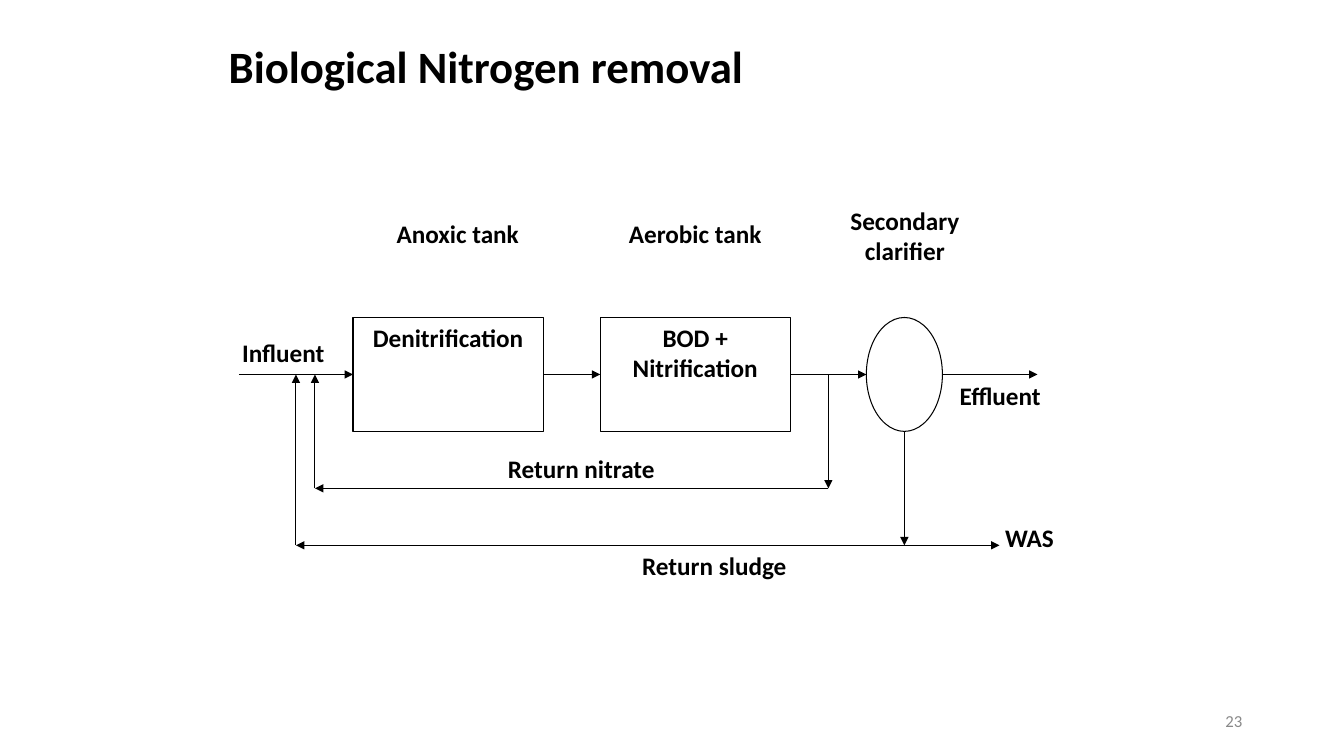
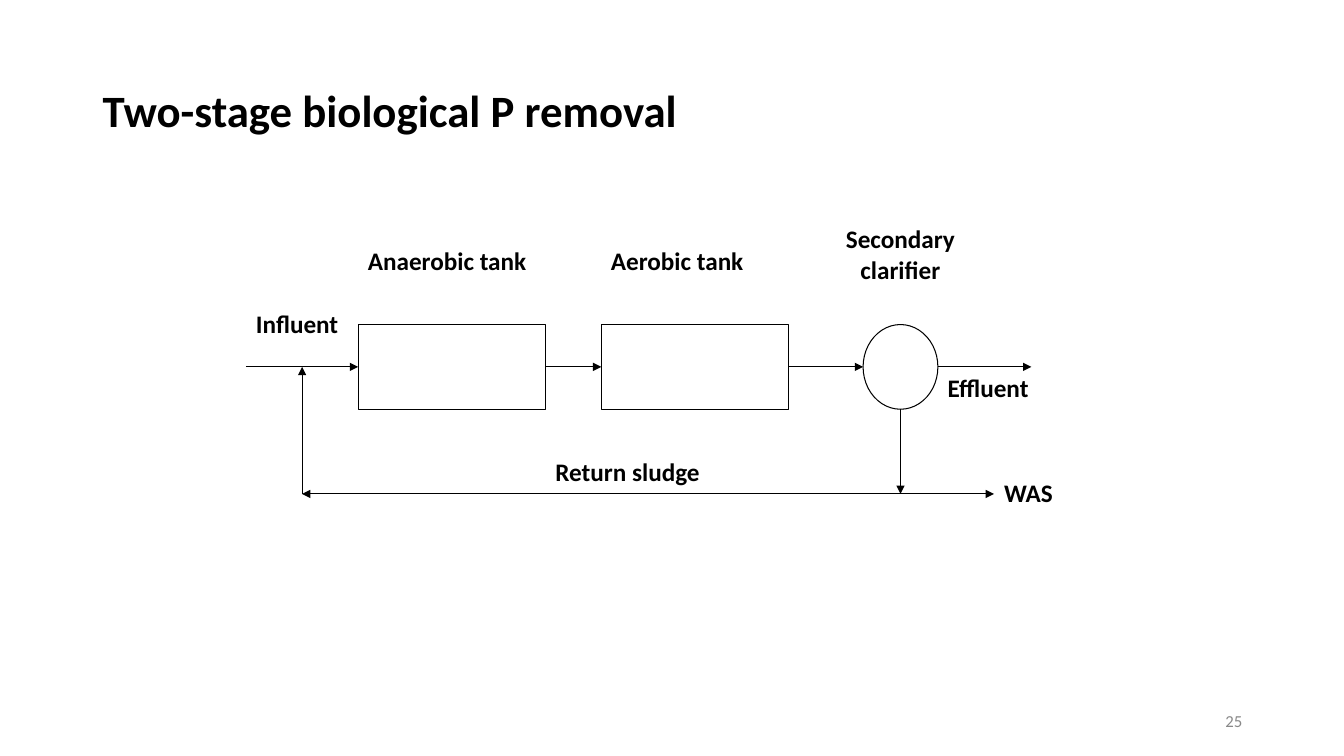
from lxml import etree
from pptx import Presentation
from pptx.dml.color import RGBColor
from pptx.enum.shapes import MSO_CONNECTOR, MSO_SHAPE
from pptx.enum.text import MSO_ANCHOR, PP_ALIGN
from pptx.oxml.ns import qn
from pptx.util import Inches, Pt

BLACK = RGBColor(0x00, 0x00, 0x00)
WHITE = RGBColor(0xFF, 0xFF, 0xFF)
GRAY = RGBColor(0x89, 0x89, 0x89)
FONT = "Calibri"
STRAIGHT = MSO_CONNECTOR.STRAIGHT
RECTANGLE, OVAL = MSO_SHAPE.RECTANGLE, MSO_SHAPE.OVAL
TOP, MIDDLE = MSO_ANCHOR.TOP, MSO_ANCHOR.MIDDLE
LEFT, CENTER, RIGHT = PP_ALIGN.LEFT, PP_ALIGN.CENTER, PP_ALIGN.RIGHT
LEFT_SIDE, RIGHT_SIDE = 1, 3


class Deck:
    def __init__(self):
        self.presentation = Presentation()
        self.presentation.slide_width = Inches(13.33)
        self.presentation.slide_height = Inches(7.5)
        self.slide = None

    def new_slide(self, title, title_box, number):
        layout = self.presentation.slide_layouts[6]
        self.slide = self.presentation.slides.add_slide(layout)
        heading = self.text(title, title_box, LEFT, size=32, anchor=MIDDLE)
        heading.line_spacing = 0.9
        self.text(number, (9.42, 6.95, 3, 0.4), RIGHT, 12, GRAY, False, MIDDLE)

    def fill_frame(self, frame, wording, align, size=18, color=BLACK, bold=True, anchor=TOP):
        frame.word_wrap = True
        frame.vertical_anchor = anchor
        frame.text = wording
        paragraph = frame.paragraphs[0]
        paragraph.alignment = align
        font = paragraph.runs[0].font
        font.name, font.size, font.bold = FONT, Pt(size), bold
        font.color.rgb = color
        return paragraph

    def text(self, wording, box, align, size=18, color=BLACK, bold=True, anchor=TOP):
        frame = self.slide.shapes.add_textbox(*map(Inches, box)).text_frame
        return self.fill_frame(frame, wording, align, size, color, bold, anchor)

    def labels(self, entries, align):
        for wording, *box in entries:
            self.text(wording, box, align).space_after = Pt(10)

    def unit(self, kind, box, wording=""):
        unit = self.slide.shapes.add_shape(kind, *map(Inches, box))
        unit.shadow.inherit = False
        unit.fill.solid()
        unit.fill.fore_color.rgb = WHITE
        unit.line.color.rgb = BLACK
        unit.line.width = Pt(0.75)
        if wording:
            self.fill_frame(unit.text_frame, wording, CENTER).space_after = Pt(10)
        return unit

    def arrow(self, start, end, source=None, target=None, both=False):
        arrow = self.slide.shapes.add_connector(STRAIGHT, *map(Inches, (*start, *end)))
        arrow.line.color.rgb = BLACK
        arrow.line.width = Pt(0.75)
        properties = arrow._element.spPr
        line = properties.find(qn("a:ln"))
        for tag in ("a:headEnd", "a:tailEnd") if both else ("a:tailEnd",):
            etree.SubElement(line, qn(tag)).set("type", "triangle")
        etree.SubElement(properties, qn("a:effectLst"))
        if source:
            arrow.begin_connect(source, RIGHT_SIDE)
        if target:
            arrow.end_connect(target, LEFT_SIDE)

    def process_train(self, inlet, span, top, height, processes=("", ""), nitrate=False):
        def x(step):
            return inlet + step * span / 42

        flow = top + height / 2
        sludge = top + 2 * height
        first, second = [
            self.unit(RECTANGLE, (x(step), top, x(10) - inlet, height), process)
            for step, process in zip((6, 19), processes)
        ]
        self.unit(OVAL, (x(33), top, x(4) - inlet, height))

        for start, end, source, target in (
            (0, 6, None, first),
            (16, 19, first, second),
            (29, 33, second, None),
            (37, 42, None, None),
        ):
            self.arrow((x(start), flow), (x(end), flow), source, target)

        self.arrow((x(3), sludge), (x(3), flow))
        self.arrow((x(3), sludge), (x(40), sludge), both=True)
        self.arrow((x(35), top + height), (x(35), sludge))

        if nitrate:
            recycle = top + 1.5 * height
            route = ((x(31), flow), (x(31), recycle), (x(4), recycle), (x(4), flow))
            for start, end in zip(route, route[1:]):
                self.arrow(start, end)


def nitrogen_removal(deck):
    deck.new_slide("Biological Nitrogen removal", (2.17, 0.3, 9, 0.77), "23")
    deck.process_train(
        2.37, 7.92, 3.15, 1.13, ("Denitrification", "BOD + Nitrification"), nitrate=True
    )
    deck.labels((
        ("Return nitrate", 4.82, 4.45, 1.89, 0.56),
        ("Return sludge", 6.14, 5.41, 1.89, 0.47),
        ("WAS", 9.74, 5.13, 0.94, 0.56),
        ("Anoxic tank", 3.69, 2.12, 1.7, 0.84),
        ("Aerobic tank", 5.95, 2.12, 1.89, 0.84),
        ("Secondary clarifier", 8.22, 1.99, 1.51, 1.13),
        ("Influent", 2.18, 3.3, 1.26, 0.84),
        ("Effluent", 9.35, 3.72, 1.14, 0.84),
    ), CENTER)


def phosphorus_removal(deck):
    deck.new_slide("Two-stage biological P removal", (0.92, 0.4, 11.5, 1.45), "25")
    deck.process_train(2.44, 7.79, 3.22, 0.84)
    deck.labels((
        ("Return sludge", 5.41, 4.48, 1.85, 0.63),
        ("WAS", 9.86, 4.69, 0.93, 0.42),
        ("Anaerobic tank", 3.55, 2.38, 1.85, 0.63),
        ("Aerobic tank", 5.96, 2.38, 1.85, 0.63),
        ("Influent", 2.44, 3.01, 1.11, 0.63),
        ("Effluent", 9.3, 3.64, 1.3, 0.63),
    ), LEFT)
    deck.labels((("Secondary clarifier", 8.19, 2.17, 1.48, 0.84),), CENTER)


def main():
    deck = Deck()
    nitrogen_removal(deck)
    phosphorus_removal(deck)
    deck.presentation.save("out.pptx")


if __name__ == "__main__":
    main()
